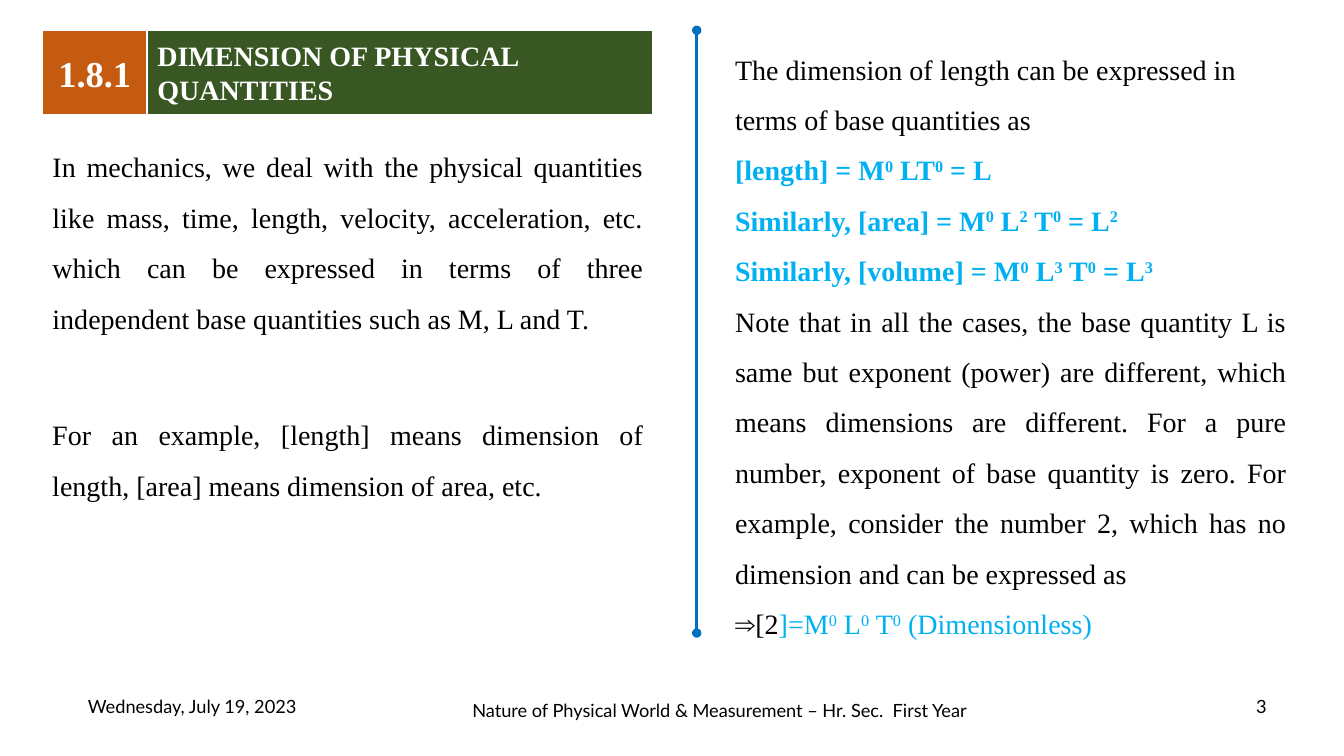
from lxml import etree
from pptx import Presentation
from pptx.dml.color import RGBColor
from pptx.enum.shapes import MSO_CONNECTOR, MSO_SHAPE
from pptx.enum.text import MSO_ANCHOR, MSO_AUTO_SIZE, PP_ALIGN
from pptx.oxml.ns import qn
from pptx.util import Inches, Pt

LEFT, CENTER, JUSTIFY = PP_ALIGN.LEFT, PP_ALIGN.CENTER, PP_ALIGN.JUSTIFY
TOP, MIDDLE = MSO_ANCHOR.TOP, MSO_ANCHOR.MIDDLE
NO_FIT = MSO_AUTO_SIZE.NONE
RECTANGLE, STRAIGHT = MSO_SHAPE.RECTANGLE, MSO_CONNECTOR.STRAIGHT

BLACK = RGBColor(0x00, 0x00, 0x00)
WHITE = RGBColor(0xFF, 0xFF, 0xFF)
ORANGE = RGBColor(0xC5, 0x5A, 0x11)
GREEN = RGBColor(0x38, 0x57, 0x23)
BLUE = RGBColor(0x00, 0x70, 0xC0)
SKY = RGBColor(0x00, 0xB0, 0xF0)
SERIF, SANS = "Times New Roman", "Lato"

# Text between carets is superscript.
SECTION_NUMBER = "1.8.1"
SECTION_TITLE = "DIMENSION OF PHYSICAL QUANTITIES"
MECHANICS = [(JUSTIFY, [(
    "In mechanics, we deal with the physical quantities like mass, time, length, "
    "velocity, acceleration, etc. which can be expressed in terms of three "
    "independent base quantities such as M, L and T.", BLACK, False)])]
EXAMPLE = [(JUSTIFY, [(
    "For an example, [length] means dimension of length, [area] means "
    "dimension of area, etc.", BLACK, False)])]
DIMENSIONS = [
    (LEFT, [("The dimension of length can be expressed in terms of base "
             "quantities as", BLACK, False)]),
    (JUSTIFY, [("[length] = M^0^ LT^0^ = L", SKY, True)]),
    (JUSTIFY, [("Similarly, [area] = M^0^ L^2^ T^0^ = L^2^", SKY, True)]),
    (JUSTIFY, [("Similarly, [volume] = M^0^ L^3^ T^0^ = L^3^", SKY, True)]),
    (JUSTIFY, [("Note that in all the cases, the base quantity L is same but exponent "
                "(power) are different, which means dimensions are different. For a "
                "pure number, exponent of base quantity is zero. For example, consider "
                "the number 2, which has no dimension and can be expressed as",
                BLACK, False)]),
    (JUSTIFY, [("⇒[2", BLACK, False),
               ("]=M^0^ L^0^ T^0^ (Dimensionless)", SKY, False)]),
]
FOOTERS = [
    ("Wednesday, July 19, 2023", 0.71, 6.81, 2.39),
    ("Nature of Physical World & Measurement – Hr. Sec.  First Year", 4.55, 6.85, 5.17),
    ("3", 12.3, 6.81, 0.42),
]

SLIDE_WIDTH, SLIDE_HEIGHT = 13.33, 7.5
LEFT_COLUMN, LEFT_WIDTH = 0.42, 6.06
RIGHT_COLUMN, RIGHT_WIDTH = 7.19, 5.67
CONTENT_TOP, HEADER_HEIGHT, NUMBER_WIDTH = 0.3, 0.84, 1.04
DIVIDER_X, DIVIDER_BOTTOM = 6.91, 6.28
FOOTER_HEIGHT = 0.4


def place(box, left, top, width, height):
    box.left, box.top = Inches(left), Inches(top)
    box.width, box.height = Inches(width), Inches(height)


def write(box, paragraphs, size, font=SERIF, anchor=TOP, spacing=1.0):
    frame = box.text_frame
    frame.auto_size = NO_FIT
    frame.word_wrap = True
    frame.vertical_anchor = anchor
    for index, (alignment, phrases) in enumerate(paragraphs):
        paragraph = frame.add_paragraph() if index else frame.paragraphs[0]
        paragraph.alignment = alignment
        paragraph.line_spacing = spacing
        paragraph.space_before = paragraph.space_after = Pt(0)
        properties = paragraph._p.get_or_add_pPr()
        properties.set("marL", "0")
        properties.set("indent", "0")
        etree.SubElement(properties, qn("a:buNone"))
        for text, color, bold in phrases:
            for part, piece in enumerate(text.split("^")):
                if not piece:
                    continue
                run = paragraph.add_run()
                run.text = piece
                run.font.name, run.font.size = font, Pt(size)
                run.font.bold, run.font.color.rgb = bold, color
                if part % 2:
                    run._r.get_or_add_rPr().set("baseline", "30000")


def paint(panel, color):
    panel.fill.solid()
    panel.fill.fore_color.rgb = color
    panel.line.color.rgb = WHITE
    panel.line.width = Pt(1.5)


def add_divider(slide):
    divider = slide.shapes.add_connector(
        STRAIGHT, Inches(DIVIDER_X), Inches(CONTENT_TOP),
        Inches(DIVIDER_X), Inches(DIVIDER_BOTTOM))
    divider.line.color.rgb = BLUE
    divider.line.width = Pt(2.25)
    outline = divider.line._get_or_add_ln()
    for end in ("a:headEnd", "a:tailEnd"):
        etree.SubElement(outline, qn(end)).set("type", "oval")
    etree.SubElement(divider._element.spPr, qn("a:effectLst"))


def main():
    deck = Presentation()
    deck.slide_width, deck.slide_height = Inches(SLIDE_WIDTH), Inches(SLIDE_HEIGHT)
    slide = deck.slides.add_slide(deck.slide_layouts[3])
    title, mechanics, dimensions = slide.placeholders

    number = slide.shapes.add_shape(RECTANGLE, 0, 0, 0, 0)
    number.shadow.inherit = False
    place(number, LEFT_COLUMN, CONTENT_TOP, NUMBER_WIDTH, HEADER_HEIGHT)
    place(title, LEFT_COLUMN + NUMBER_WIDTH, CONTENT_TOP,
          LEFT_WIDTH - NUMBER_WIDTH, HEADER_HEIGHT)
    paint(number, ORANGE)
    paint(title, GREEN)
    write(number, [(CENTER, [(SECTION_NUMBER, WHITE, True)])], 26, anchor=MIDDLE)
    write(title, [(LEFT, [(SECTION_TITLE, WHITE, True)])], 20, anchor=MIDDLE)

    example = slide.shapes.add_textbox(0, 0, 0, 0)
    place(mechanics, LEFT_COLUMN, 1.27, LEFT_WIDTH, 2.57)
    place(example, LEFT_COLUMN, 3.93, LEFT_WIDTH, 1.06)
    place(dimensions, RIGHT_COLUMN, CONTENT_TOP, RIGHT_WIDTH, 6.66)
    for box, paragraphs in ((mechanics, MECHANICS), (example, EXAMPLE),
                            (dimensions, DIMENSIONS)):
        write(box, paragraphs, 20, spacing=1.5)

    add_divider(slide)
    for text, left, top, width in FOOTERS:
        footer = slide.shapes.add_textbox(0, 0, 0, 0)
        place(footer, left, top, width, FOOTER_HEIGHT)
        write(footer, [(CENTER, [(text, BLACK, False)])], 13, SANS, MIDDLE)

    deck.save("out.pptx")


if __name__ == "__main__":
    main()
